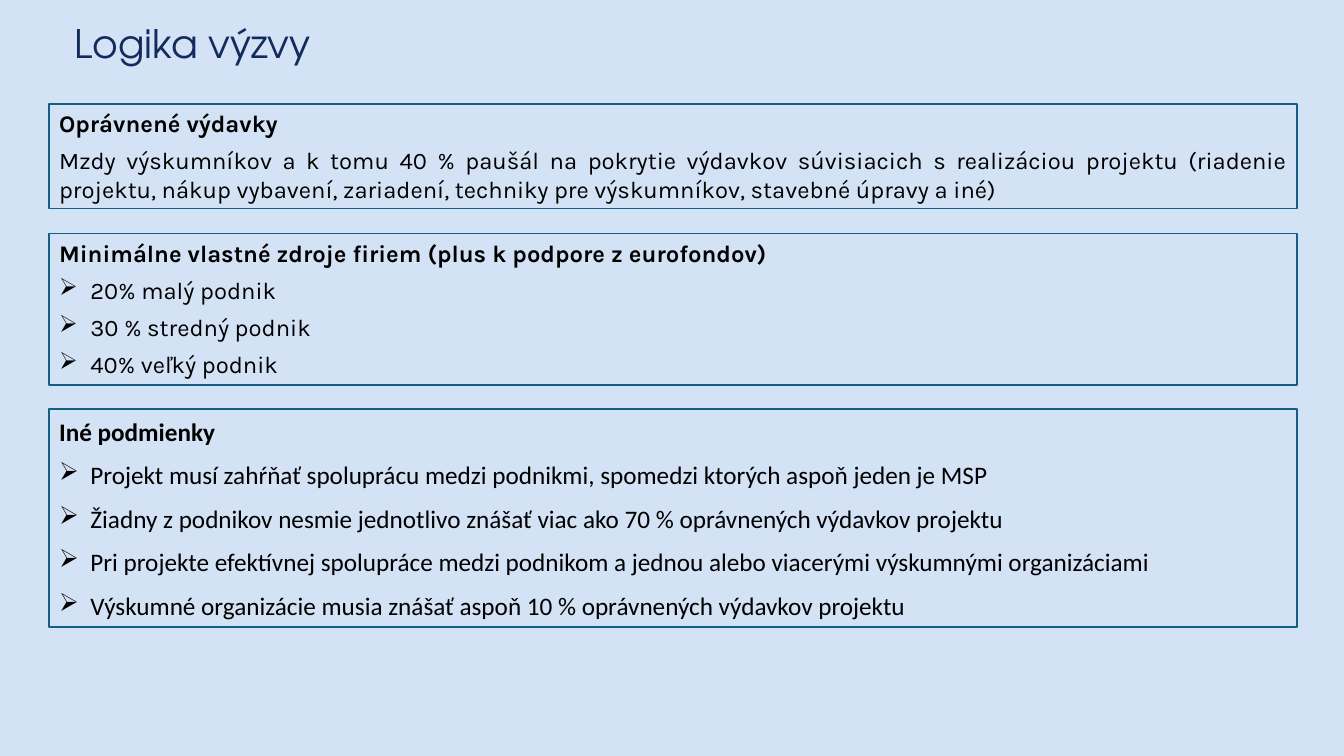
from lxml import etree
from pptx import Presentation
from pptx.dml.color import RGBColor
from pptx.enum.shapes import MSO_SHAPE
from pptx.enum.text import MSO_ANCHOR, MSO_AUTO_SIZE, PP_ALIGN
from pptx.oxml.ns import qn
from pptx.util import Cm, Pt

RECT = MSO_SHAPE.RECTANGLE
TOP, MIDDLE = MSO_ANCHOR.TOP, MSO_ANCHOR.MIDDLE
GROW, FIXED = MSO_AUTO_SIZE.SHAPE_TO_FIT_TEXT, MSO_AUTO_SIZE.NONE
LEFT, JUST = PP_ALIGN.LEFT, PP_ALIGN.JUSTIFY

COSTS = [
    "Mzdy výskumníkov a k tomu 40 % paušál na pokrytie výdavkov súvisiacich "
    "s realizáciou projektu (riadenie projektu, nákup vybavení, zariadení, "
    "techniky pre výskumníkov, stavebné úpravy a iné)",
]
SHARES = ["20% malý podnik", "30 % stredný podnik", "40% veľký podnik"]
TERMS = [
    "Projekt musí zahŕňať spoluprácu medzi podnikmi, spomedzi ktorých aspoň jeden je MSP",
    "Žiadny z podnikov nesmie jednotlivo znášať viac ako 70 % oprávnených výdavkov projektu",
    "Pri projekte efektívnej spolupráce medzi podnikom a jednou alebo viacerými "
    "výskumnými organizáciami",
    "Výskumné organizácie musia znášať aspoň 10 % oprávnených výdavkov projektu",
]


def color(code):
    return RGBColor.from_string(code)


def style(para, face, size, code, bold=False):
    para.font.name = face
    para.font.size = Pt(size)
    para.font.bold = bold
    para.font.color.rgb = color(code)


def bullet(para):
    props = para._p.get_or_add_pPr()
    props.set("marL", str(Cm(0.79)))
    props.set("indent", str(-Cm(0.79)))
    etree.SubElement(props, qn("a:buChar")).set("char", "➢")


def add_title(slide, text, left, top, width, height):
    title = slide.shapes.title
    title.left, title.top, title.width, title.height = left, top, width, height
    frame = title.text_frame
    frame.text = text
    frame.vertical_anchor = MIDDLE
    frame.auto_size = FIXED
    para = frame.paragraphs[0]
    para.alignment = LEFT
    para.line_spacing = 0.9
    style(para, "TeX Gyre Adventor", 28, "122A5C")


def add_panel(slide, box, head, items, marks=True, face="Karla", size=17,
              after=6, lines=1.0, align=LEFT):
    panel = slide.shapes.add_shape(RECT, *box)
    panel.shadow.inherit = False
    panel.fill.background()
    panel.line.color.rgb = color("156082")
    panel.line.width = Pt(1)
    frame = panel.text_frame
    frame.word_wrap = True
    frame.vertical_anchor = TOP
    frame.auto_size = GROW
    for rank, text in enumerate([head] + items):
        para = frame.add_paragraph() if rank else frame.paragraphs[0]
        para.text = text
        if rank and marks:
            bullet(para)
        para.alignment = align if rank else LEFT
        para.space_after = Pt(after)
        para.line_spacing = lines
        style(para, face, size, "000000", rank == 0)


def main():
    deck = Presentation()
    deck.slide_width, deck.slide_height = Cm(33.87), Cm(19.05)
    slide = deck.slides.add_slide(deck.slide_layouts[5])
    back = slide.background.fill
    back.solid()
    back.fore_color.rgb = color("D3E2F5")

    add_title(slide, "Logika výzvy", Cm(1.63), Cm(0.1), Cm(20.98), Cm(2.11))
    left, width = Cm(1.24), Cm(31.45)
    add_panel(slide, (left, Cm(2.62), width, Cm(2.64)),
              "Oprávnené výdavky", COSTS, marks=False, align=JUST)
    add_panel(slide, (left, Cm(5.89), width, Cm(3.81)),
              "Minimálne vlastné zdroje firiem (plus k podpore z eurofondov)", SHARES)
    add_panel(slide, (left, Cm(10.31), width, Cm(5.49)), "Iné podmienky", TERMS,
              face="Calibri", size=18, after=8, lines=1.07, align=JUST)
    deck.save("out.pptx")


if __name__ == "__main__":
    main()
